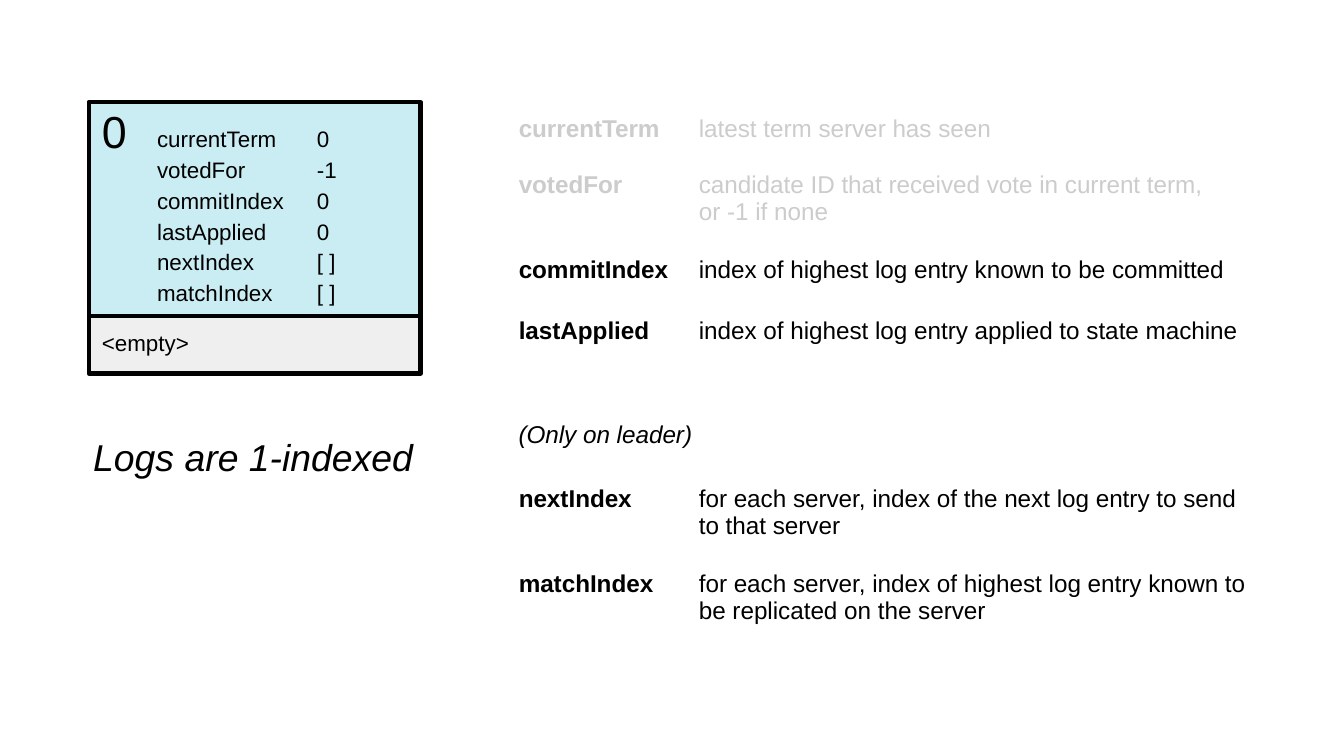
"""Build a slide showing an empty server's state beside definitions of its variables."""
from lxml import etree
from pptx import Presentation
from pptx.dml.color import RGBColor
from pptx.enum.shapes import MSO_SHAPE
from pptx.enum.text import MSO_ANCHOR, PP_ALIGN
from pptx.oxml.ns import qn
from pptx.util import Inches, Pt

RECTANGLE = MSO_SHAPE.RECTANGLE
TOP, MIDDLE = MSO_ANCHOR.TOP, MSO_ANCHOR.MIDDLE
LEFT, CENTER = PP_ALIGN.LEFT, PP_ALIGN.CENTER
BLACK, GRAY, WHITE = "000000", "CCCCCC", "FFFFFF"


def color(value):
    return RGBColor.from_string(value)


def write(holder, text, size=12, ink=BLACK, bold=False, italic=False,
          align=LEFT, anchor=TOP, spacing=None):
    holder.margin_left = holder.margin_right = Inches(0.1)
    holder.margin_top = holder.margin_bottom = Inches(0.1)
    holder.vertical_anchor = anchor
    holder.text = text
    for paragraph in getattr(holder, "text_frame", holder).paragraphs:
        paragraph.alignment = align
        paragraph.line_spacing = spacing
        for run in paragraph.runs:
            font = run.font
            font.name, font.size = "Arial", Pt(size)
            font.bold, font.italic = bold, italic
            font.color.rgb = color(ink)


deck = Presentation()
deck.slide_width = Inches(10)
deck.slide_height = deck.slide_width * 9 // 16
slide = deck.slides.add_slide(deck.slide_layouts[6])

server = slide.shapes.add_group_shape().shapes
panels = []
for top, height, fill in [(0.76, 1.62, "CAEDF3"), (2.35, 0.43, "EFEFEF")]:
    panel = server.add_shape(RECTANGLE, Inches(0.66), Inches(top), Inches(2.47), Inches(height))
    panel.shadow.inherit = False
    panel.fill.solid()
    panel.fill.fore_color.rgb = color(fill)
    panel.line.color.rgb = color(BLACK)
    panel.line.width = Pt(2.25)
    panels.append(panel)
state_panel, log_panel = panels
write(log_panel.text_frame, "<empty>")

state = {"currentTerm": "0", "votedFor": "-1", "commitIndex": "0",
         "lastApplied": "0", "nextIndex": "[ ]", "matchIndex": "[ ]"}
labels = [
    (server, (1.07, 0.8, 1.28, 1.48), "\n".join(state), dict(spacing=1.15)),
    (server, (0.66, 0.67, 0.71, 0.59), "0", dict(size=24)),
    (server, (2.26, 0.8, 0.77, 1.48), "\n".join(state.values()), dict(spacing=1.15)),
    (slide.shapes, (3.76, 3.02, 1.59, 0.38), "(Only on leader)",
     dict(size=13, italic=True, anchor=MIDDLE, spacing=1.15)),
    (slide.shapes, (0.32, 3.13, 3.13, 0.57), "Logs are 1-indexed",
     dict(size=20, italic=True, align=CENTER)),
]
for parent, place, text, style in labels:
    label = parent.add_textbox(*map(Inches, place))
    label.text_frame.word_wrap = True
    write(label.text_frame, text, **style)

all_servers = [
    ("currentTerm", "latest term server has seen", GRAY, 0.3),
    ("votedFor", "candidate ID that received vote in current term,\nor -1 if none", GRAY, 0.45),
    ("commitIndex", "index of highest log entry known to be committed", BLACK, 0.45),
    ("lastApplied", "index of highest log entry applied to state machine", BLACK, 0.45),
]
leader_only = [
    ("nextIndex", "for each server, index of the next log entry to send to that server",
     BLACK, 0.45),
    ("matchIndex", "for each server, index of highest log entry known to be replicated on the server",
     BLACK, 0.59),
]
for top, definitions in [(0.76, all_servers), (3.51, leader_only)]:
    height = sum(definition[3] for definition in definitions)
    table = slide.shapes.add_table(len(definitions), 2, Inches(3.76), Inches(top),
                                   Inches(5.71), Inches(height)).table
    table.first_row = table.horz_banding = False
    table.columns[0].width, table.columns[1].width = Inches(1.34), Inches(4.37)
    for row, (variable, meaning, ink, row_height) in zip(table.rows, definitions):
        row.height = Inches(row_height)
        for cell, text, bold in zip(row.cells, (variable, meaning), (True, False)):
            write(cell, text, size=13, ink=ink, bold=bold)
            properties = cell._tc.get_or_add_tcPr()
            for edge in ("a:lnL", "a:lnR", "a:lnT", "a:lnB"):
                border = etree.SubElement(properties, qn(edge), w=str(Pt(1.5)))
                paint = etree.SubElement(border, qn("a:solidFill"))
                etree.SubElement(paint, qn("a:srgbClr"), val=WHITE)
            cell.fill.background()

deck.save("out.pptx")
